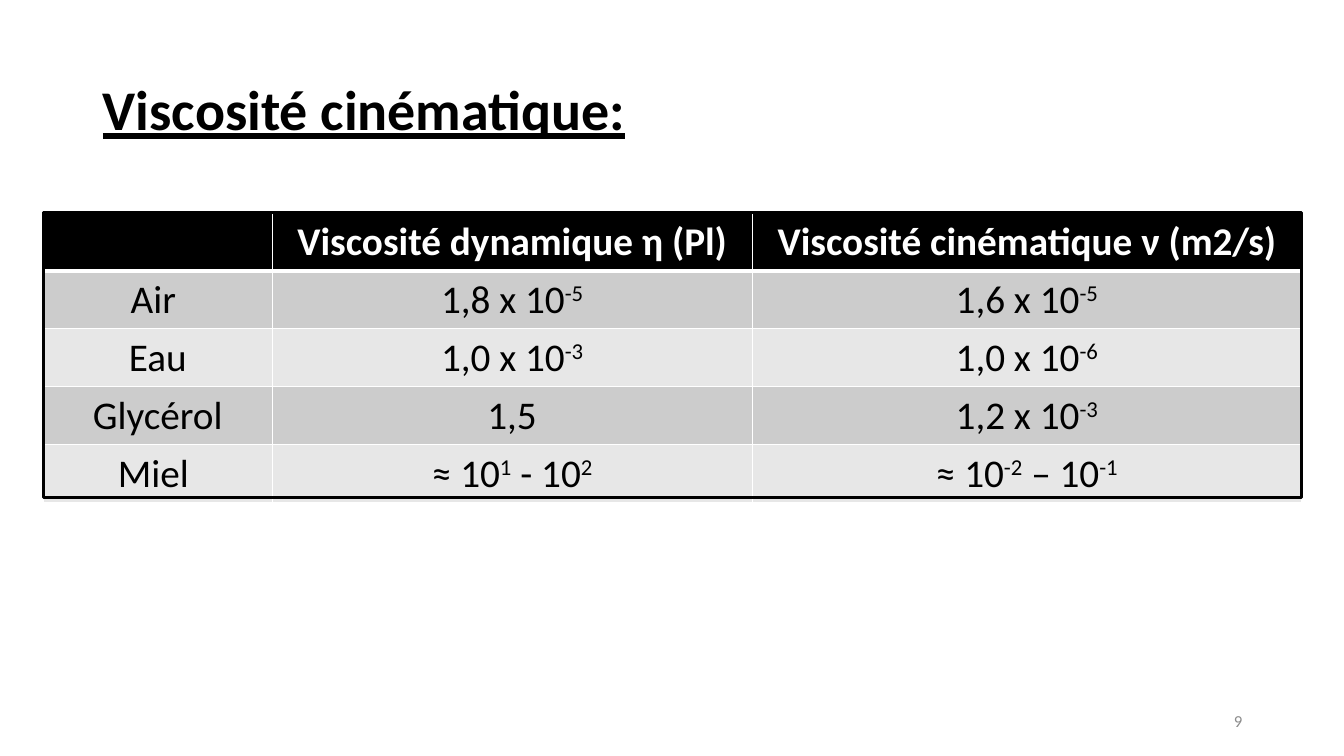
from pptx import Presentation
from pptx.dml.color import RGBColor as Rgb
from pptx.enum.shapes import MSO_SHAPE as Shape
from pptx.enum.text import MSO_ANCHOR as Anchor, PP_ALIGN as Align
from pptx.oxml import parse_xml
from pptx.oxml.ns import nsdecls
from pptx.util import Inches, Pt

COLORS = {"black": "000000", "white": "FFFFFF", "dark_band": "CCCCCC",
          "light_band": "E7E7E7", "number": "8C8C8C"}
FONT = "Calibri"

# Each cell is a list of pieces that alternate between normal and superscript
ROWS = [
    [[""], ["Viscosité dynamique η (Pl)"], ["Viscosité cinématique ν (m2/s)"]],
    [["Air "], ["1,8 x 10", "-5"], ["1,6 x 10", "-5"]],
    [["Eau"], ["1,0 x 10", "-3"], ["1,0 x 10", "-6"]],
    [["Glycérol"], ["1,5"], ["1,2 x 10", "-3"]],
    [["Miel "], ["≈ 10", "1", " - 10", "2"], ["≈ 10", "-2", " – 10", "-1"]],
]
COLUMN_WIDTHS = [2.27, 4.76, 5.45]
ROW_HEIGHT = 0.57


class SlideBuilder:
    def __init__(self, presentation):
        self.slide = presentation.slides.add_slide(presentation.slide_layouts[5])

    def format(self, paragraph, size, color, align, bold=False, underline=False):
        paragraph.alignment = align
        font = paragraph.font
        font.name, font.size = FONT, Pt(size)
        font.bold, font.underline = bold, underline
        font.color.rgb = Rgb.from_string(COLORS[color])

    def title(self, text, left, top, width, height):
        shape = self.slide.shapes.title
        shape.left, shape.top = Inches(left), Inches(top)
        shape.width, shape.height = Inches(width), Inches(height)
        frame = shape.text_frame
        frame.text = text
        frame.vertical_anchor = Anchor.MIDDLE
        paragraph = frame.paragraphs[0]
        paragraph.line_spacing = 0.9
        self.format(paragraph, 40, "black", Align.LEFT, bold=True, underline=True)

    def text(self, text, left, top, width, height):
        box = self.slide.shapes.add_textbox(
            Inches(left), Inches(top), Inches(width), Inches(height))
        frame = box.text_frame
        frame.word_wrap = True
        frame.vertical_anchor = Anchor.MIDDLE
        frame.text = text
        self.format(frame.paragraphs[0], 12, "number", Align.RIGHT)

    def borders(self, cell, top, bottom):
        properties = cell._tc.get_or_add_tcPr()
        for side, points in zip("LRTB", (1, 1, top, bottom)):
            properties.append(parse_xml(
                f'<a:ln{side} {nsdecls("a")} w="{Pt(points)}"><a:solidFill>'
                f'<a:srgbClr val="{COLORS["white"]}"/></a:solidFill></a:ln{side}>'))

    def cell(self, cell, pieces, fill, color, bold):
        cell.fill.solid()
        cell.fill.fore_color.rgb = Rgb.from_string(COLORS[fill])
        paragraph = cell.text_frame.paragraphs[0]
        self.format(paragraph, 28, color, Align.CENTER, bold)
        for index, piece in enumerate(pieces):
            if piece:
                run = paragraph.add_run()
                run.text = piece
                if index % 2:
                    run._r.get_or_add_rPr().set("baseline", "30000")

    def table(self, rows, widths, left, top):
        table = self.slide.shapes.add_table(
            len(rows), len(widths), Inches(left), Inches(top),
            Inches(sum(widths)), Inches(ROW_HEIGHT * len(rows))).table
        for column, width in zip(table.columns, widths):
            column.width = Inches(width)
        for row_index, row in enumerate(rows):
            header = row_index == 0
            band = "dark_band" if row_index % 2 else "light_band"
            for column_index, pieces in enumerate(row):
                cell = table.cell(row_index, column_index)
                self.borders(cell, 3 if row_index == 1 else 1, 3 if header else 1)
                self.cell(cell, pieces, "black" if header else band,
                          "white" if header else "black", header)

    def frame(self, left, top, width, height):
        shape = self.slide.shapes.add_shape(
            Shape.RECTANGLE, Inches(left), Inches(top), Inches(width), Inches(height))
        shape.shadow.inherit = False
        shape.fill.background()
        shape.line.color.rgb = Rgb.from_string(COLORS["black"])
        shape.line.width = Pt(2.25)


def main():
    presentation = Presentation()
    presentation.slide_width, presentation.slide_height = Inches(13.33), Inches(7.5)
    builder = SlideBuilder(presentation)

    # Heading
    builder.title("Viscosité cinématique:", 0.92, 0.39, 11.5, 1.45)

    # Viscosity table with its outline
    builder.table(ROWS, COLUMN_WIDTHS, 0.43, 2.11)
    builder.frame(0.43, 2.11, sum(COLUMN_WIDTHS), 2.83)

    # Slide number
    builder.text("9", 9.42, 6.95, 3, 0.4)

    presentation.save("out.pptx")


if __name__ == "__main__":
    main()
